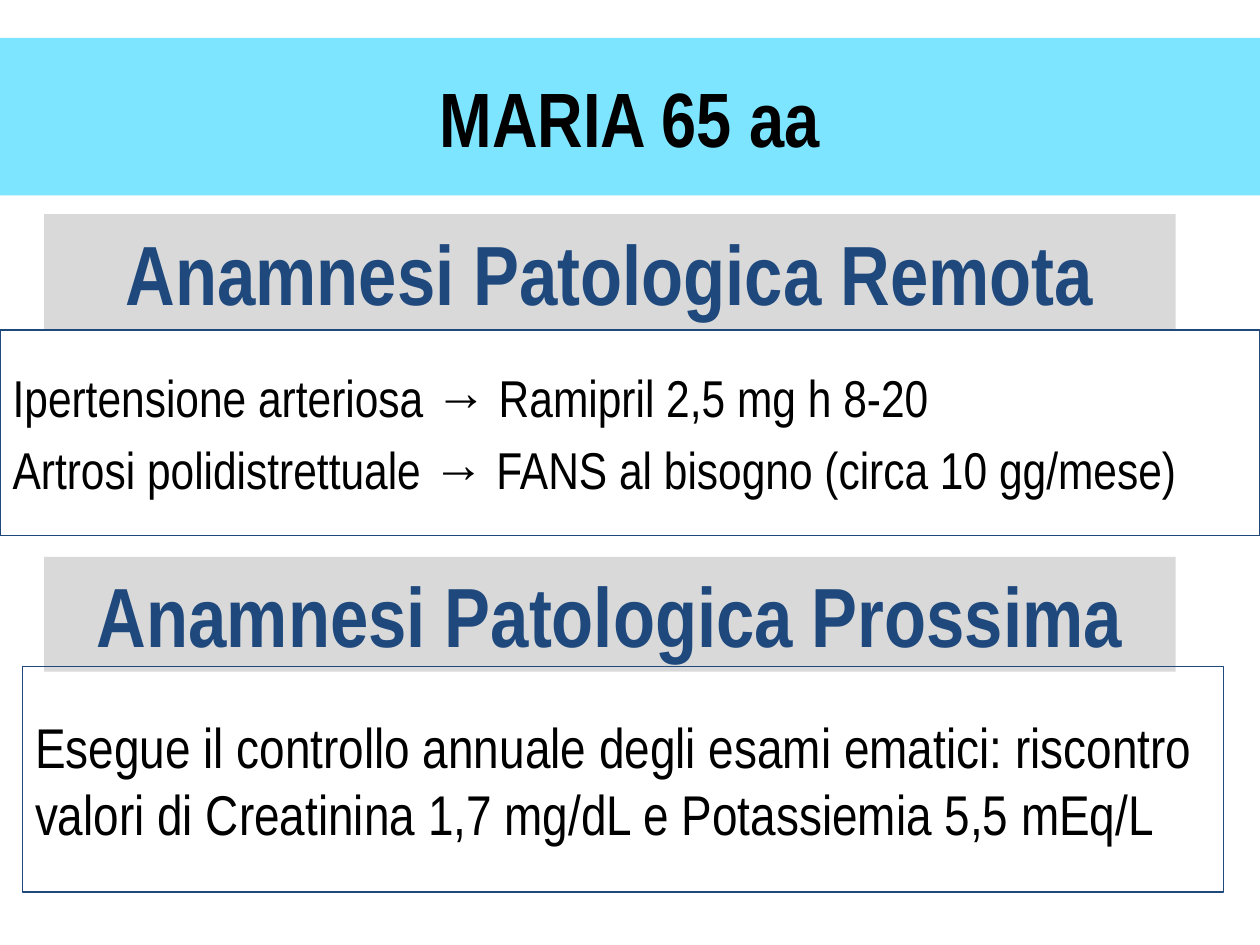
from lxml import etree
from pptx import Presentation
from pptx.dml.color import RGBColor
from pptx.enum import shapes, text
from pptx.oxml import ns
from pptx.util import Inches, Pt

COLORS = {"band": "00CCFF", "grey": "D9D9D9", "navy": "1F497D", "ink": "000000"}
FACE = "Arial Narrow"
LEFT, CENTER = text.PP_ALIGN.LEFT, text.PP_ALIGN.CENTER


def color(name):
    return RGBColor.from_string(COLORS[name])


def place(shape, box):
    for name, size in zip(("left", "top", "width", "height"), box):
        setattr(shape, name, Inches(size))


def write(shape, lines, size, ink="ink", bold=False, align=LEFT, before=0):
    frame = shape.text_frame
    frame.text = "\n".join(lines)
    setup = {"word_wrap": True, "auto_size": text.MSO_AUTO_SIZE.NONE,
             "vertical_anchor": text.MSO_ANCHOR.MIDDLE}
    for key, value in setup.items():
        setattr(frame, key, value)
    font = {"name": FACE, "size": Pt(size), "bold": bold}
    for par in frame.paragraphs:
        par.alignment = align
        par.space_before = Pt(before)
        for run in par.runs:
            for key, value in font.items():
                setattr(run.font, key, value)
            run.font.color.rgb = color(ink)


def outline(shape):
    shape.fill.background()
    shape.line.color.rgb = color("navy")
    shape.line.width = Pt(0.75)


def add_title(slide, box, words):
    title = slide.shapes.title
    place(title, box)
    title.fill.solid()
    title.fill.fore_color.rgb = color("band")
    # Half-transparent band
    tint = title.fill._xPr.find(".//" + ns.qn("a:srgbClr"))
    etree.SubElement(tint, ns.qn("a:alpha"), val="51000")
    write(title, [words], 44, bold=True, align=CENTER)


def add_head(slide, box, words):
    head = slide.shapes.add_shape(shapes.MSO_SHAPE.RECTANGLE, *map(Inches, box))
    head.shadow.inherit = False
    head.fill.solid()
    head.fill.fore_color.rgb = color("grey")
    head.line.fill.background()
    write(head, [words], 48, "navy", True, CENTER)


def add_list(slide, box, lines):
    body = slide.placeholders[1]
    place(body, box)
    outline(body)
    write(body, lines, 29.6, before=6)
    # No bullets or indents
    for par in body.text_frame.paragraphs:
        props = par._p.get_or_add_pPr()
        props.set("marL", "0")
        props.set("indent", "0")
        etree.SubElement(props, ns.qn("a:buNone"))


def add_note(slide, box, words):
    note = slide.shapes.add_textbox(*map(Inches, box))
    outline(note)
    write(note, [words], 32, before=6.4)


def main():
    deck = Presentation()
    deck.slide_width, deck.slide_height = Inches(10), Inches(7.5)
    slide = deck.slides.add_slide(deck.slide_layouts[1])

    add_title(slide, (0, 0.3, 10, 1.25), "MARIA 65 aa")

    # Past history
    add_list(slide, (0, 2.62, 10, 1.63), [
        "Ipertensione arteriosa → Ramipril 2,5 mg h 8-20",
        "Artrosi polidistrettuale → FANS al bisogno (circa 10 gg/mese)",
    ])
    heads = ((1.7, "Remota"), (4.42, "Prossima"))
    for top, kind in heads:
        add_head(slide, (0.35, top, 8.98, 0.91), f"Anamnesi Patologica {kind}")

    # Recent history
    add_note(slide, (0.18, 5.29, 9.53, 1.79),
             "Esegue il controllo annuale degli esami ematici: riscontro "
             "valori di Creatinina 1,7 mg/dL e Potassiemia 5,5 mEq/L")

    deck.save("out.pptx")


if __name__ == "__main__":
    main()
